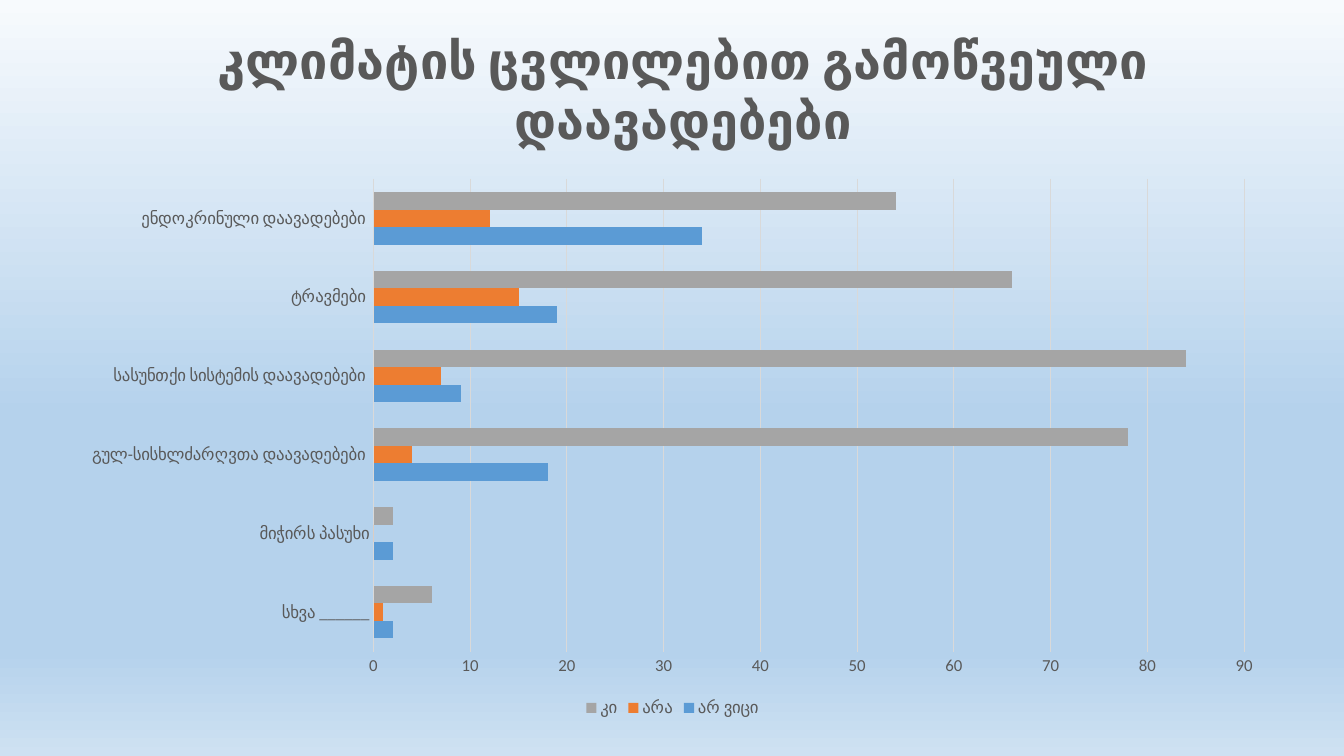
import pptx
import pptx.chart.data
import pptx.dml.color
import pptx.enum.chart
import pptx.enum.text
import pptx.oxml
import pptx.oxml.ns
import pptx.util

PX = 12192000 / 1344
FONT = "Calibri"
COLORS = {
    "text": "595959", "grid": "D9D9D9",
    "unsure": "5B9BD5", "no": "ED7D31", "yes": "A5A5A5",
    "sky_top": "F7FAFD", "sky": "B5D2EC", "sky_bottom": "CEE1F2",
}


def px(length):
    return pptx.util.Emu(round(length * PX))


def style_font(font, size, bold=False):
    font.name = FONT
    font.size = pptx.util.Pt(size)
    font.bold = bold
    font.color.rgb = pptx.dml.color.RGBColor.from_string(COLORS["text"])


deck = pptx.Presentation()
deck.slide_width, deck.slide_height = px(1344), px(756)
page = deck.slides.add_slide(deck.slide_layouts[5])

# Background gradient, top to bottom
page.background.fill.gradient()
gradient = page.background.fill._xPr.find(pptx.oxml.ns.qn("a:gradFill"))
stops = [(0, "sky_top"), (55, "sky"), (86, "sky"), (100, "sky_bottom")]
stop_xml = "".join(
    f'<a:gs pos="{percent * 1000}"><a:srgbClr val="{COLORS[name]}"/></a:gs>'
    for percent, name in stops
)
gradient.getparent().replace(gradient, pptx.oxml.parse_xml(
    f'<a:gradFill {pptx.oxml.ns.nsdecls("a")} rotWithShape="1">'
    f'<a:gsLst>{stop_xml}</a:gsLst><a:lin ang="5400000" scaled="0"/></a:gradFill>'
))

# Title
title = page.shapes.title
title.left, title.top, title.width, title.height = px(68), px(24), px(1230), px(72)
frame = title.text_frame
frame.word_wrap = True
frame.auto_size = pptx.enum.text.MSO_AUTO_SIZE.SHAPE_TO_FIT_TEXT
frame.vertical_anchor = pptx.enum.text.MSO_ANCHOR.TOP
para = frame.paragraphs[0]
para.alignment = pptx.enum.text.PP_ALIGN.CENTER
span = para.add_run()
span.text = "კლიმატის ცვლილებით გამოწვეული დაავადებები"
style_font(span.font, 36, bold=True)

# Chart data, from the bottom group up
answers = [
    ("არ ვიცი", "unsure", [2, 2, 18, 9, 19, 34]),
    ("არა", "no", [1, 0, 4, 7, 15, 12]),
    ("კი", "yes", [6, 2, 78, 84, 66, 54]),
]
data = pptx.chart.data.CategoryChartData()
data.categories = [
    "სხვა ______",
    "მიჭირს პასუხი",
    "გულ-სისხლძარღვთა დაავადებები ",
    "სასუნთქი სისტემის დაავადებები ",
    "ტრავმები ",
    "ენდოკრინული დაავადებები ",
]
for name, color, values in answers:
    data.add_series(name, values)

# Clustered bars
chart = page.shapes.add_chart(
    pptx.enum.chart.XL_CHART_TYPE.BAR_CLUSTERED,
    px(68), px(168), px(1209), px(554), data,
).chart
chart.has_title = False
style_font(chart.font, 12)
plot = chart.plots[0]
plot.gap_width = 150
plot.vary_by_categories = False
for series, (name, color, values) in zip(plot.series, answers):
    series.format.fill.solid()
    series.format.fill.fore_color.rgb = pptx.dml.color.RGBColor.from_string(COLORS[color])

# Axes
for axis in (chart.category_axis, chart.value_axis):
    axis.major_tick_mark = pptx.enum.chart.XL_TICK_MARK.NONE
    axis.minor_tick_mark = pptx.enum.chart.XL_TICK_MARK.NONE
    axis.format.line.fill.background()
    style_font(axis.tick_labels.font, 12)
chart.category_axis.has_major_gridlines = False
scale = chart.value_axis
scale.minimum_scale, scale.maximum_scale, scale.major_unit = 0, 90, 10
scale.has_major_gridlines = True
grid_line = scale.major_gridlines.format.line
grid_line.width = pptx.util.Pt(0.75)
grid_line.color.rgb = pptx.dml.color.RGBColor.from_string(COLORS["grid"])

# Legend
chart.has_legend = True
chart.legend.position = pptx.enum.chart.XL_LEGEND_POSITION.BOTTOM
chart.legend.include_in_layout = False
style_font(chart.legend.font, 12)

deck.save("out.pptx")
